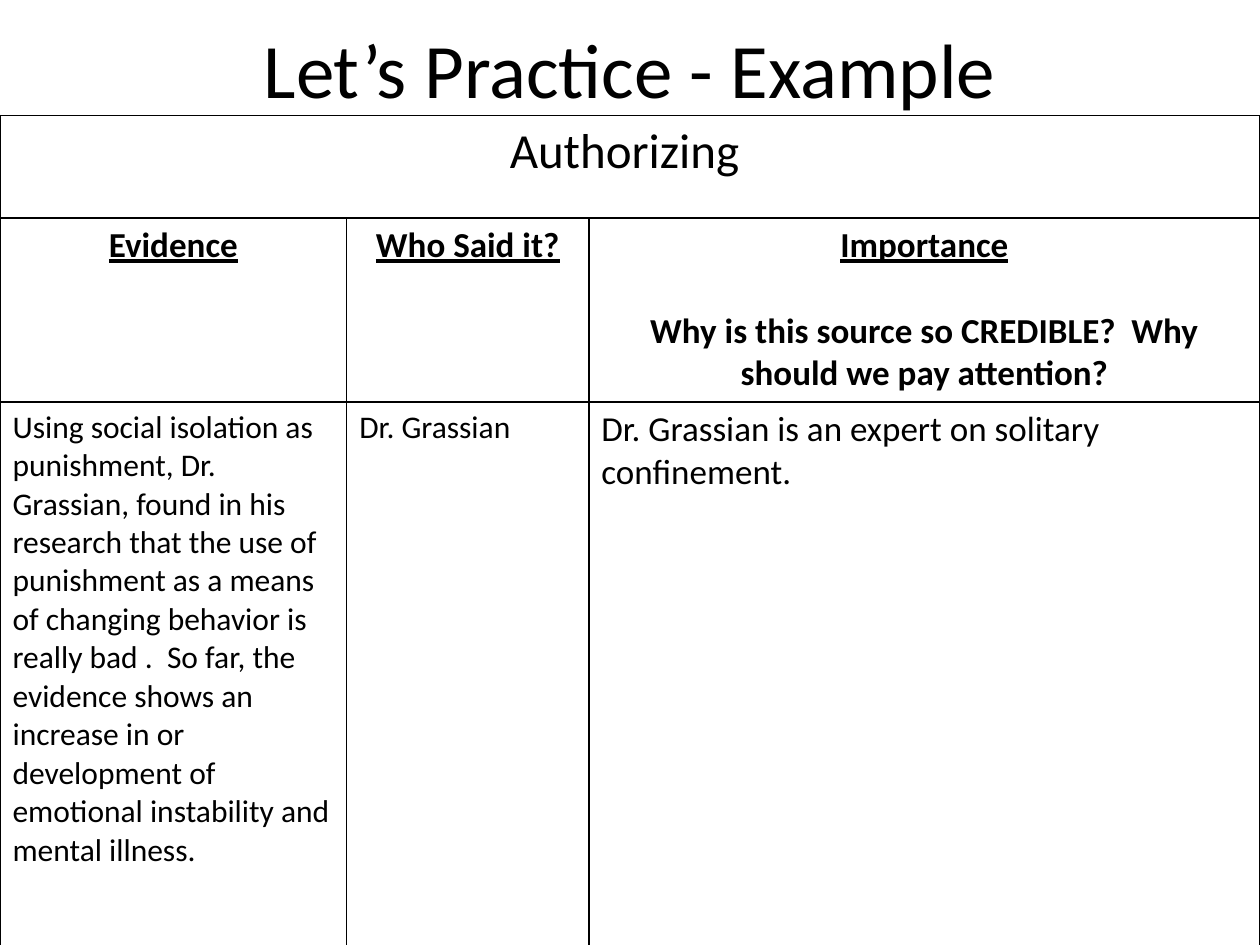
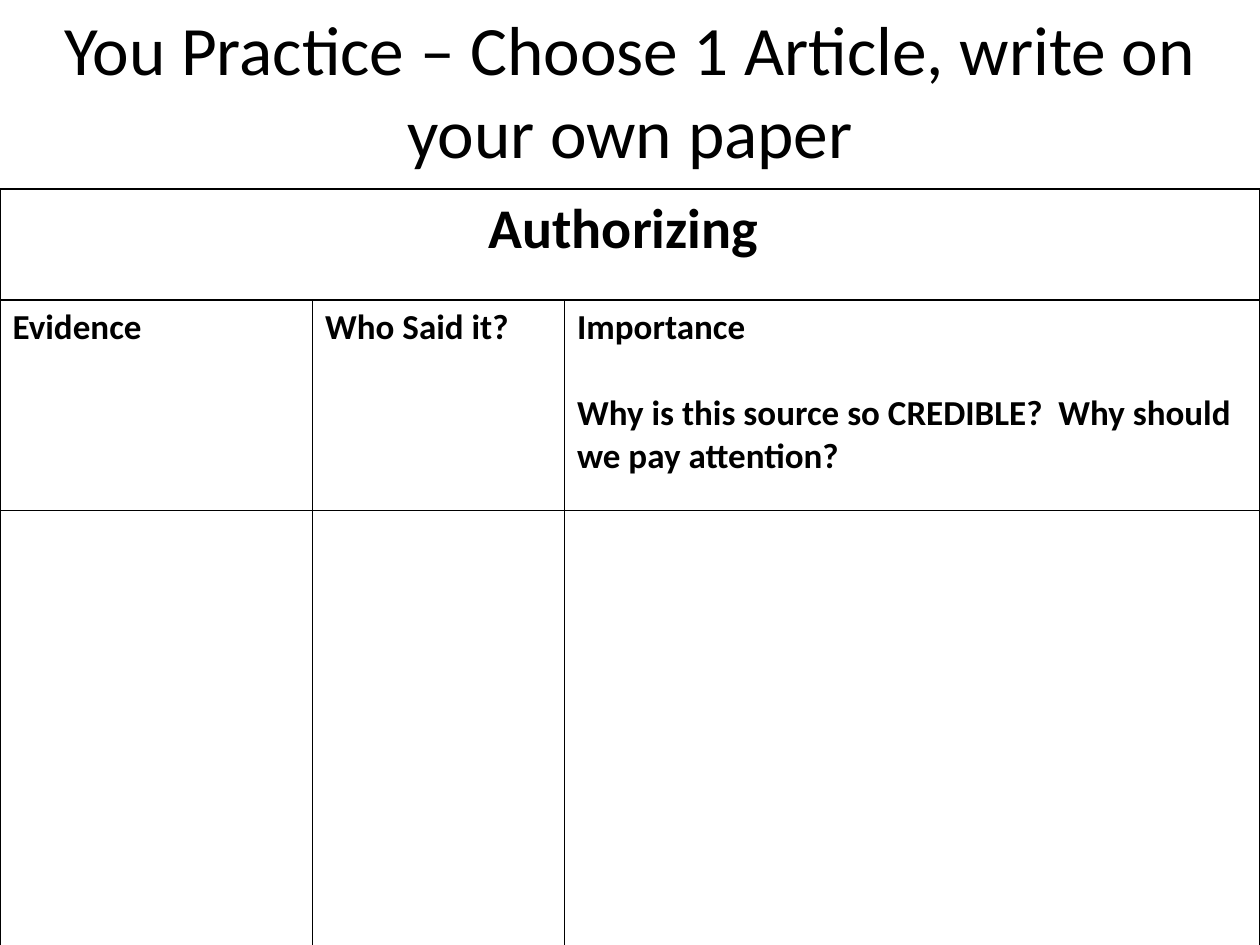
"""Build two slides that practise authorizing evidence in a table."""
from lxml import etree
from pptx import Presentation
from pptx import util as u
from pptx.dml.color import RGBColor
from pptx.enum import text
from pptx.oxml.ns import qn

theme = {
    "face": "Calibri",
    "ink": RGBColor(0, 0, 0),
    "paper": RGBColor(255, 255, 255),
    "line": u.Pt(1),
    "head": 20,
    "gap": u.Pt(24.4),
}
mid, left = text.PP_ALIGN.CENTER, text.PP_ALIGN.LEFT
wide, high = u.Cm(25.4), u.Cm(19.05)
ask = "Why is this source so CREDIBLE?  Why should we pay attention?"
heads = [["Evidence"], ["Who Said it?"], ["Importance", ask]]
proof = (
    "Using social isolation as punishment, Dr. Grassian, found in his research "
    "that the use of punishment as a means of changing behavior is really bad .  "
    "So far, the evidence shows an increase in or development of emotional "
    "instability and mental illness."
)
pages = [
    {
        "title": "Let’s Practice - Example", "size": 44, "tall": 2.74,
        "top": 2.33, "cols": [6.99, 4.88, 13.53], "rows": [2.06, 3.71, 15.97],
        "band": {"size": 28, "bold": False}, "align": mid, "under": True,
        "notes": [(proof, 18), ("Dr. Grassian", 18),
                  ("Dr. Grassian is an expert on solitary confinement.", 20)],
    },
    {
        "title": "You Practice – Choose 1 Article, write on your own paper",
        "size": 39.6, "tall": 3.61,
        "top": 3.81, "cols": [6.3, 5.08, 14.02], "rows": [2.24, 4.24, 8.84],
        "band": {"size": 32, "bold": True}, "align": left, "under": False,
        "notes": [],
    },
]


def write(para, words, align, size, **style):
    """Fill one paragraph in the shared face and ink."""
    para.alignment = align
    run = para.add_run()
    run.text = words
    run.font.color.rgb = theme["ink"]
    style.update(name=theme["face"], size=u.Pt(size))
    for key, value in style.items():
        setattr(run.font, key, value)


def frame(cell):
    """Give a cell a plain fill and four thin borders."""
    cell.fill.solid()
    cell.fill.fore_color.rgb = theme["paper"]
    props = cell._tc.get_or_add_tcPr()
    for spot, side in enumerate("LRTB"):
        edge = etree.Element(qn("a:ln" + side), w=str(theme["line"]))
        fill = etree.SubElement(edge, qn("a:solidFill"))
        etree.SubElement(fill, qn("a:srgbClr"), val=str(theme["ink"]))
        props.insert(spot, edge)


deck = Presentation()
deck.slide_width, deck.slide_height = wide, high

for page in pages:
    slide = deck.slides.add_slide(deck.slide_layouts[5])
    title = slide.shapes.title
    place = {"left": 0, "top": 0, "width": wide, "height": u.Cm(page["tall"])}
    for key, value in place.items():
        setattr(title, key, value)
    box = title.text_frame
    form = {"word_wrap": True, "auto_size": text.MSO_AUTO_SIZE.NONE,
            "vertical_anchor": text.MSO_ANCHOR.MIDDLE}
    for key, value in form.items():
        setattr(box, key, value)
    write(box.paragraphs[0], page["title"], mid, page["size"])

    grid = slide.shapes.add_table(
        3, 3, 0, u.Cm(page["top"]), wide, u.Cm(sum(page["rows"]))).table
    grid.first_row = grid.horz_banding = False
    for col, size in zip(grid.columns, page["cols"]):
        col.width = u.Cm(size)
    for row, size in zip(grid.rows, page["rows"]):
        row.height = u.Cm(size)
    for cell in grid.iter_cells():
        frame(cell)

    grid.cell(0, 0).merge(grid.cell(0, 2))
    band = grid.cell(0, 0).text_frame.paragraphs[0]
    write(band, "Authorizing ", mid, **page["band"])

    for spot, lines in enumerate(heads):
        body = grid.cell(1, spot).text_frame
        write(body.paragraphs[0], lines[0], page["align"], theme["head"],
              bold=True, underline=page["under"])
        for words in lines[1:]:
            para = body.add_paragraph()
            para.space_before = theme["gap"]
            write(para, words, page["align"], theme["head"], bold=True)

    for spot, (words, size) in enumerate(page["notes"]):
        para = grid.cell(2, spot).text_frame.paragraphs[0]
        write(para, words, left, size, bold=False)

deck.save("out.pptx")
